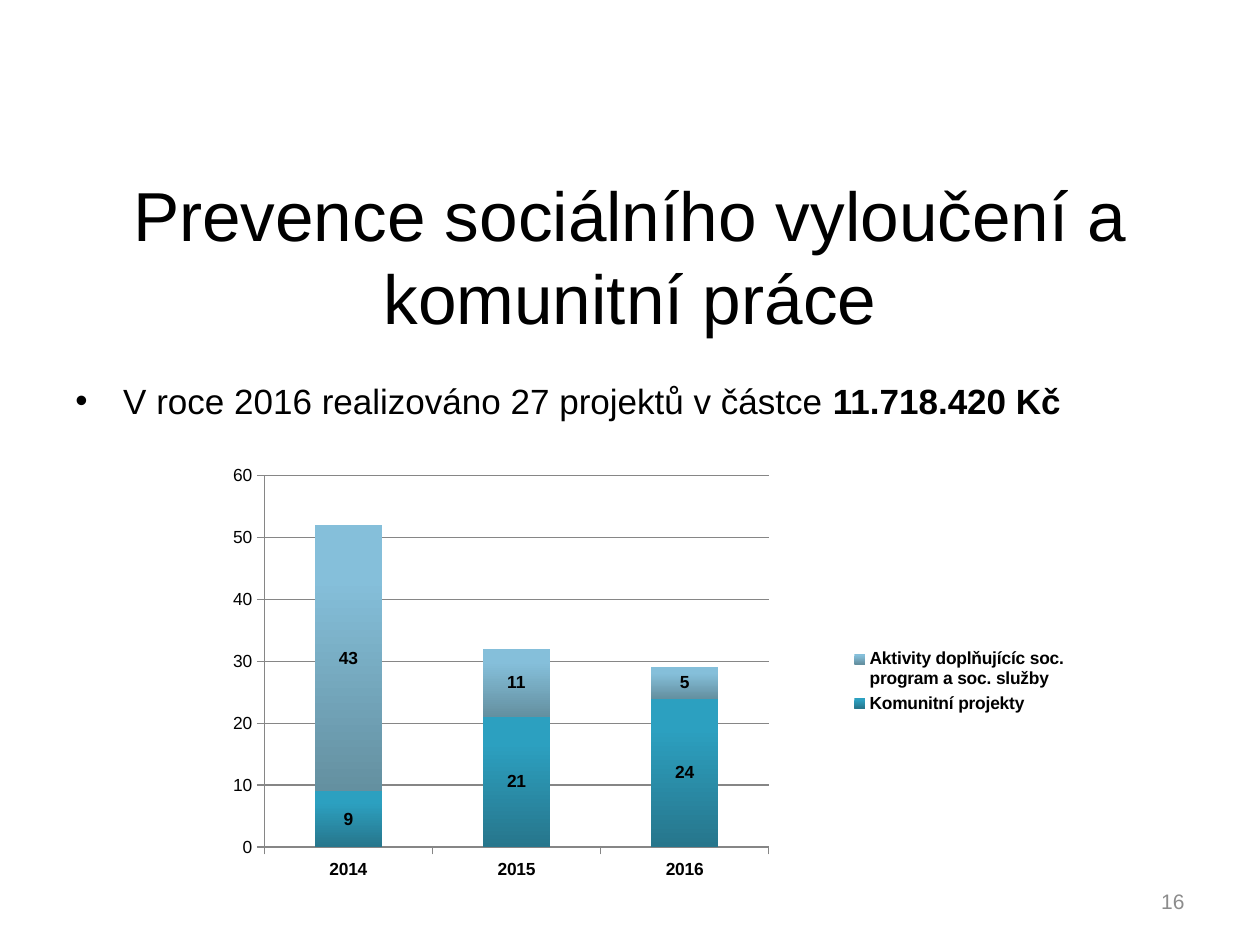
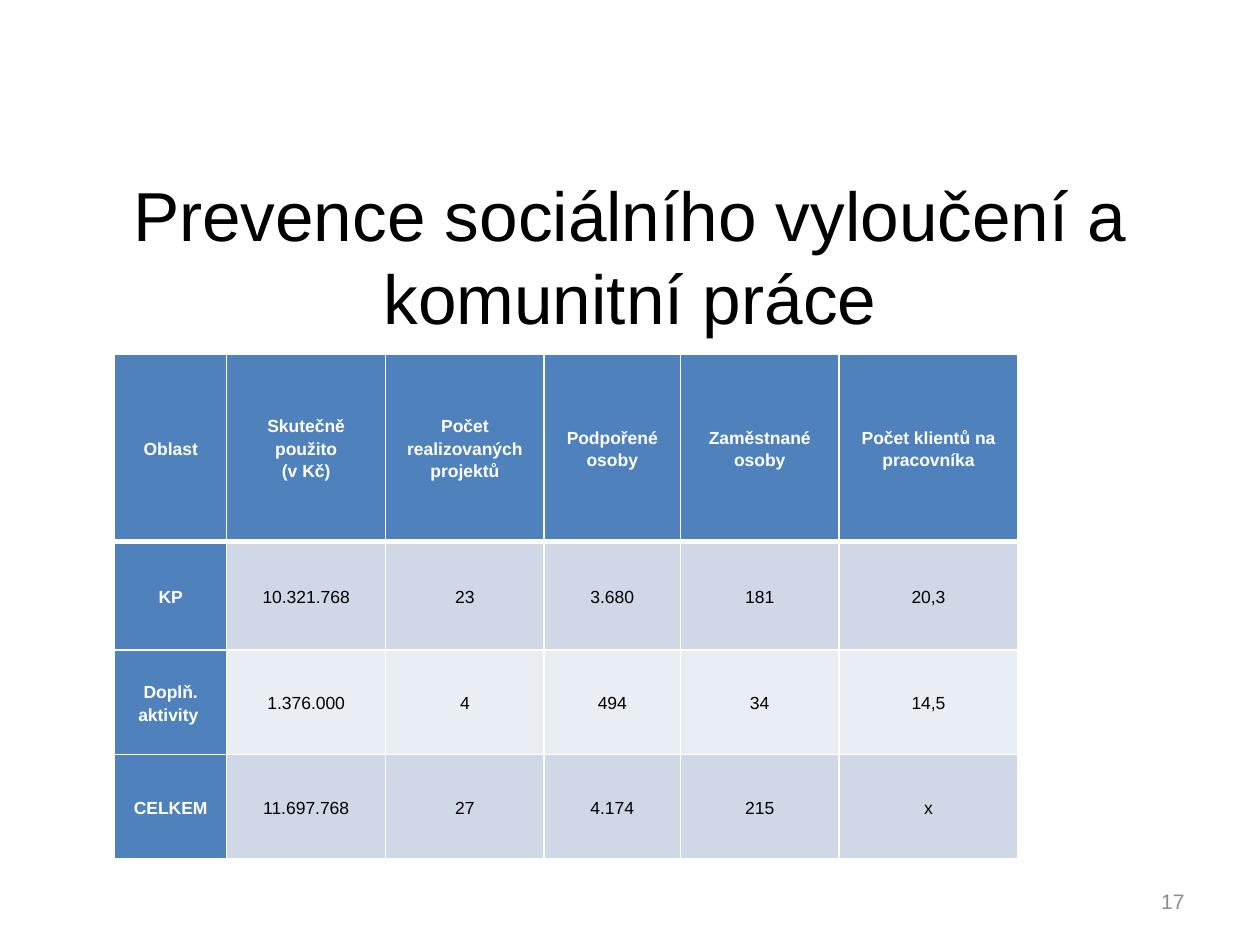
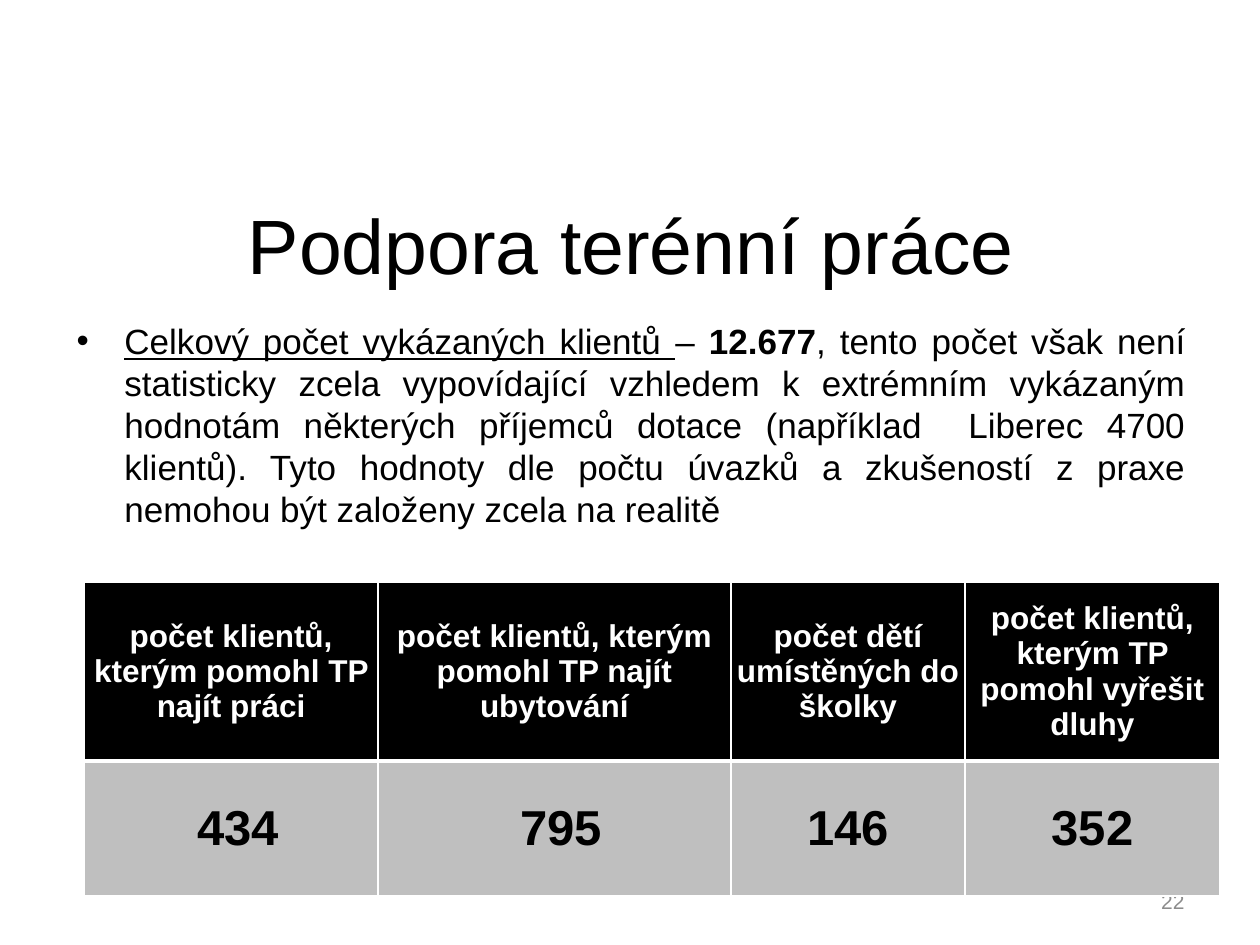
from lxml.etree import SubElement
from pptx import Presentation
from pptx.chart.data import CategoryChartData
from pptx.dml.color import RGBColor
from pptx.enum.chart import XL_CHART_TYPE, XL_LEGEND_POSITION, XL_TICK_MARK
from pptx.enum.text import MSO_ANCHOR, PP_ALIGN
from pptx.oxml import parse_xml
from pptx.oxml.ns import nsdecls, qn
from pptx.util import Inches, Pt

FONT = "Arial"
BLACK = RGBColor(0, 0, 0)
WHITE = RGBColor(0xFF, 0xFF, 0xFF)
GRAY = RGBColor(0x8C, 0x8C, 0x8C)
AXIS = RGBColor(0x86, 0x86, 0x86)
BLUE = RGBColor(0x4F, 0x81, 0xBD)
BANDS = [RGBColor(0xD0, 0xD8, 0xE8), RGBColor(0xE9, 0xED, 0xF4)]
SILVER = RGBColor(0xBF, 0xBF, 0xBF)
TEAL = (RGBColor(0x2C, 0xA0, 0xC0), RGBColor(0x27, 0x76, 0x8C))
SKY = (RGBColor(0x85, 0xBF, 0xDA), RGBColor(0x64, 0x90, 0xA0))

WIDE, HIGH = 10, 7.5
MARGIN = 0.05 * WIDE
BODY = 0.9 * WIDE

PREVENT = "Prevence sociálního vyloučení a komunitní práce"
FIELD = "Podpora terénní práce"
SPENT = [("V roce 2016 realizováno 27 projektů v částce ", ""), ("11.718.420 Kč", "b")]
CLIENTS = [
    ("Celkový počet vykázaných klientů ", "u"),
    ("– ", ""),
    ("12.677", "b"),
    (", tento počet však není statisticky zcela vypovídající vzhledem "
     "k extrémním vykázaným hodnotám některých příjemců dotace "
     "(například  Liberec 4700 klientů). Tyto hodnoty dle počtu úvazků "
     "a zkušeností z praxe nemohou být založeny zcela na realitě", ""),
]
YEARS = ["2014", "2015", "2016"]
SERIES = [
    ("Komunitní projekty", (9, 21, 24), TEAL),
    ("Aktivity doplňujícíc soc. program a soc. služby", (43, 11, 5), SKY),
]
AREAS = [
    ["Oblast", "Skutečně použito\n(v Kč)", "Počet realizovaných projektů",
     "Podpořené osoby", "Zaměstnané osoby", "Počet klientů na pracovníka"],
    ["KP", "10.321.768", "23", "3.680", "181", "20,3"],
    ["Doplň. aktivity ", "1.376.000", "4", "494", "34", "14,5"],
    ["CELKEM", "11.697.768", "27", "4.174", "215", "x"],
]
HELPED = [
    ["počet klientů, kterým pomohl TP najít práci",
     "počet klientů, kterým pomohl TP najít ubytování",
     "počet dětí umístěných do školky",
     "počet klientů, kterým TP pomohl vyřešit dluhy"],
    [" 434", " 795", "146", "352"],
]


def style(font, size, color=BLACK, bold=False):
    font.name, font.size, font.bold = FONT, Pt(size), bold
    font.color.rgb = color


def add_box(slide, x, y, w, h, anchor=MSO_ANCHOR.MIDDLE):
    frame = slide.shapes.add_textbox(*map(Inches, (x, y, w, h))).text_frame
    frame.word_wrap = True
    frame.vertical_anchor = anchor
    return frame


def add_line(slide, text, place, size, align, color=BLACK):
    frame = add_box(slide, *place)
    frame.text = text
    para = frame.paragraphs[0]
    para.alignment = align
    style(para.runs[0].font, size, color)


def add_slide(deck, title, size, number, left=MARGIN, top=1.4):
    slide = deck.slides.add_slide(deck.slide_layouts[6])
    add_line(slide, title, (left, top, BODY, 1.25), size, PP_ALIGN.CENTER)
    add_line(slide, str(number), (7.17, 6.95, 2.33, 0.4), 12, PP_ALIGN.RIGHT, GRAY)
    return slide


def add_bullet(slide, parts, place, align):
    para = add_box(slide, *place, MSO_ANCHOR.TOP).paragraphs[0]
    props = para._p.get_or_add_pPr()
    props.set("marL", str(Inches(0.38)))
    props.set("indent", str(-Inches(0.38)))
    SubElement(props, qn("a:buFont")).set("typeface", FONT)
    SubElement(props, qn("a:buChar")).set("char", "•")
    para.alignment = align
    for text, mark in parts:
        run = para.add_run()
        run.text = text
        style(run.font, 20, bold=mark == "b")
        run.font.underline = mark == "u"


def add_border(cell, foot):
    props = cell._tc.get_or_add_tcPr()
    for side, width in zip("LRTB", (1, 1, 1, foot)):
        props.append(parse_xml(
            f'<a:ln{side} {nsdecls("a")} w="{Pt(width)}"><a:solidFill>'
            f'<a:srgbClr val="{WHITE}"/></a:solidFill></a:ln{side}>'))


def add_grid(slide, rows, x, y, wide, high, look, space=1.0):
    table = slide.shapes.add_table(
        len(rows), len(wide), *map(Inches, (x, y, sum(wide), sum(high)))).table
    for col, size in zip(table.columns, wide):
        col.width = Inches(size)
    for r, (row, size) in enumerate(zip(rows, high)):
        table.rows[r].height = Inches(size)
        for c, text in enumerate(row):
            fill, color, points, bold, inset = look(r, c)
            cell = table.cell(r, c)
            add_border(cell, 1 if r else 3)
            cell.fill.solid()
            cell.fill.fore_color.rgb = fill
            cell.vertical_anchor = MSO_ANCHOR.MIDDLE
            cell.margin_left = cell.margin_right = Inches(inset)
            cell.margin_top = cell.margin_bottom = 0
            cell.text_frame.text = text
            for para in cell.text_frame.paragraphs:
                para.alignment = PP_ALIGN.CENTER
                para.line_spacing = space
                style(para.runs[0].font, points, color, bold)


def area_look(r, c):
    if r == 0 or c == 0:
        return BLUE, WHITE, 10, True, 0.07
    return BANDS[(r - 1) % 2], BLACK, 10, False, 0.07


def help_look(r, c):
    if r == 0:
        return BLACK, WHITE, 18, True, 0.04
    return SILVER, BLACK, 28, True, 0.05


def set_plot(chart, x, y, w, h):
    area = chart._chartSpace.chart.plotArea
    for old in area.findall(qn("c:layout")):
        area.remove(old)
    layout = parse_xml(f'<c:layout {nsdecls("c")}><c:manualLayout/></c:layout>')
    values = dict(layoutTarget="inner", xMode="edge", yMode="edge", x=x, y=y, w=w, h=h)
    for name, value in values.items():
        SubElement(layout[0], qn("c:" + name)).set("val", str(value))
    area.insert(0, layout)


def add_columns(slide):
    data = CategoryChartData()
    data.categories = YEARS
    for name, values, _ in SERIES:
        data.add_series(name, values)
    chart = slide.shapes.add_chart(
        XL_CHART_TYPE.COLUMN_STACKED, *map(Inches, (1.85, 3.67, 6.72, 3.47)), data).chart
    style(chart.font, 10)
    chart.has_title = False
    chart.has_legend = True
    chart.legend.position = XL_LEGEND_POSITION.RIGHT
    chart.legend.include_in_layout = False
    style(chart.legend.font, 10, bold=True)
    for axis, bold in ((chart.category_axis, True), (chart.value_axis, False)):
        style(axis.tick_labels.font, 10, bold=bold)
        axis.major_tick_mark = XL_TICK_MARK.OUTSIDE
        axis.format.line.color.rgb = AXIS
    grid = chart.value_axis
    grid.minimum_scale, grid.maximum_scale, grid.major_unit = 0, 60, 10
    grid.has_major_gridlines = True
    grid.major_gridlines.format.line.color.rgb = AXIS
    plot = chart.plots[0]
    plot.gap_width, plot.overlap = 150, 100
    plot.vary_by_categories = False
    for series, (_, _, shades) in zip(plot.series, SERIES):
        fill = series.format.fill
        fill.gradient()
        fill.gradient_angle = 270
        for stop, shade, spot in zip(fill.gradient_stops, shades, (0.2, 1)):
            stop.color.rgb = shade
            stop.position = spot
        series.data_labels.show_value = True
        style(series.data_labels.font, 10, bold=True)
    set_plot(chart, 0.03, 0.03, 0.6, 0.85)


def main():
    deck = Presentation()
    deck.slide_width, deck.slide_height = Inches(WIDE), Inches(HIGH)

    slide = add_slide(deck, PREVENT, 39.6, 16)
    add_bullet(slide, SPENT, (MARGIN, 2.96, BODY, 3.74), PP_ALIGN.LEFT)
    add_columns(slide)

    slide = add_slide(deck, PREVENT, 39.6, 17)
    add_grid(slide, AREAS, 0.91, 2.81, [0.89, 1.26, 1.26, 1.08, 1.26, 1.42],
             [1.49, 0.86, 0.83, 0.83], area_look, 1.15)

    slide = add_slide(deck, FIELD, 44, 22, 0.51, 1.31)
    add_bullet(slide, CLIENTS, (0.51, 2.49, BODY, 2.13), PP_ALIGN.JUSTIFY)
    add_grid(slide, HELPED, 0.67, 4.62, [2.33, 2.8, 1.86, 2.02],
             [1.42, 1.07], help_look)

    deck.save("out.pptx")


if __name__ == "__main__":
    main()
